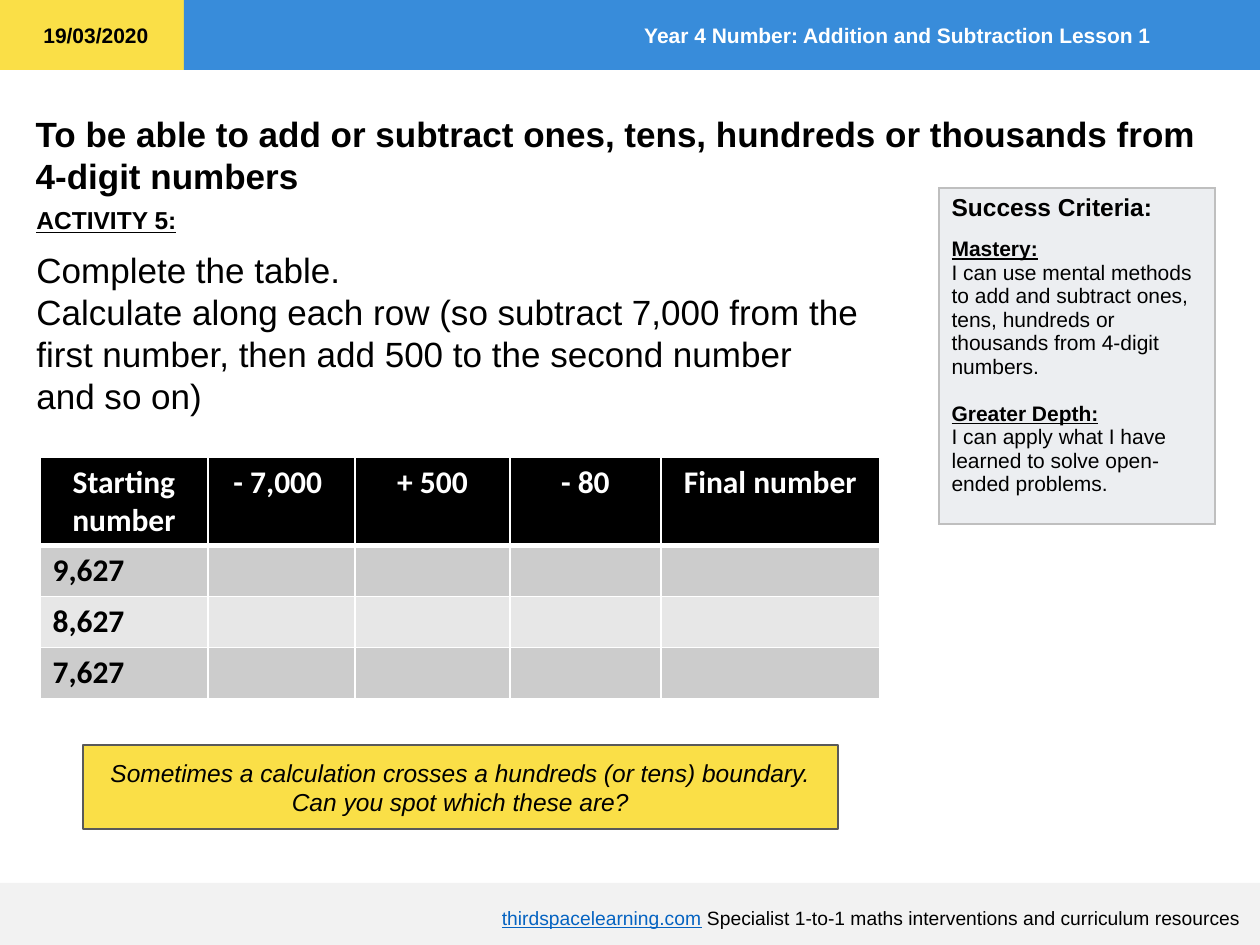
from dataclasses import dataclass
from typing import Optional

import pptx
import pptx.dml.color
import pptx.enum.shapes
import pptx.enum.text
import pptx.oxml
import pptx.oxml.ns
import pptx.util

EMU_PER_PX = 914400 / 126
ALIGN = pptx.enum.text.PP_ALIGN
ANCHOR = pptx.enum.text.MSO_ANCHOR


@dataclass(frozen=True)
class Theme:
    yellow: str = "FADF47"
    blue: str = "388CDA"
    footer: str = "F2F2F2"
    panel: str = "ECEEF1"
    panel_edge: str = "BFBFBF"
    hint_edge: str = "595959"
    link: str = "0563C1"
    black: str = "000000"
    white: str = "FFFFFF"
    bands: tuple = ("CCCCCC", "E7E7E7")
    body_font: str = "Arial"
    table_font: str = "Calibri"
    large: int = 20
    table: int = 18
    medium: int = 14
    small: int = 12
    tiny: int = 11


THEME = Theme()


@dataclass(frozen=True)
class Box:
    left: int
    top: int
    width: int
    height: int

    def emu(self) -> tuple:
        return tuple(px(v) for v in (self.left, self.top, self.width, self.height))


@dataclass(frozen=True)
class Line:
    text: str
    size: int = THEME.small
    bold: bool = False
    italic: bool = False
    underline: bool = False
    color: str = THEME.black
    font: str = THEME.body_font
    align: ALIGN = ALIGN.LEFT
    before: float = 0


def px(length: float) -> int:
    return round(length * EMU_PER_PX)


def rgb(color: str) -> pptx.dml.color.RGBColor:
    return pptx.dml.color.RGBColor.from_string(color)


def write(frame, lines: list[Line]) -> None:
    for index, line in enumerate(lines):
        paragraph = frame.paragraphs[0] if index == 0 else frame.add_paragraph()
        paragraph.alignment = line.align
        paragraph.space_before = pptx.util.Pt(line.before)
        if line.text:
            paragraph.add_run().text = line.text
        font = paragraph.font
        font.name, font.size = line.font, pptx.util.Pt(line.size)
        font.bold, font.italic, font.underline = line.bold, line.italic, line.underline
        font.color.rgb = rgb(line.color)


def add_panel(slide, box: Box, fill: str, edge: Optional[str] = None):
    panel = slide.shapes.add_shape(pptx.enum.shapes.MSO_SHAPE.RECTANGLE, *box.emu())
    panel.shadow.inherit = False
    panel.fill.solid()
    panel.fill.fore_color.rgb = rgb(fill)
    if edge:
        panel.line.color.rgb = rgb(edge)
        panel.line.width = pptx.util.Pt(1.5)
    else:
        panel.line.fill.background()
    panel.text_frame.word_wrap = True
    panel.text_frame.vertical_anchor = ANCHOR.MIDDLE
    return panel


def add_text(slide, box: Box, lines: list[Line], anchor: ANCHOR = ANCHOR.TOP):
    frame = slide.shapes.add_textbox(*box.emu()).text_frame
    frame.word_wrap = True
    frame.vertical_anchor = anchor
    write(frame, lines)
    return frame


def add_grid(slide, box: Box, columns: list[int], rows: list[int]):
    grid = slide.shapes.add_table(len(rows), len(columns), *box.emu()).table
    grid.first_row = grid.horz_banding = False
    for column, width in zip(grid.columns, columns):
        column.width = px(width)
    for row, height in zip(grid.rows, rows):
        row.height = px(height)
    return grid


def style_cell(cell, fill: str, edge: str, top: float = 1, bottom: float = 1) -> None:
    cell.fill.solid()
    cell.fill.fore_color.rgb = rgb(fill)
    properties = cell._tc.get_or_add_tcPr()
    sides = (("L", 1), ("R", 1), ("T", top), ("B", bottom))
    for index, (side, width) in enumerate(sides):
        properties.insert(index, pptx.oxml.parse_xml(
            f'<a:ln{side} {pptx.oxml.ns.nsdecls("a")} w="{pptx.util.Pt(width)}">'
            f'<a:solidFill><a:srgbClr val="{edge}"/></a:solidFill></a:ln{side}>'))


def add_header(slide) -> None:
    add_panel(slide, Box(0, 0, 184, 70), THEME.yellow)
    banner = add_panel(slide, Box(184, 0, 1076, 70), THEME.blue).text_frame
    banner.margin_right = px(109)
    write(banner, [Line("Year 4 Number: Addition and Subtraction Lesson 1", bold=True,
                        color=THEME.white, align=ALIGN.RIGHT)])
    add_text(slide, Box(31, 16, 140, 38), [Line("19/03/2020", bold=True)])


def add_footer(slide) -> None:
    add_panel(slide, Box(0, 883, 1260, 62), THEME.footer)
    frame = add_text(slide, Box(453, 900, 800, 36),
                     [Line("thirdspacelearning.com", THEME.tiny, align=ALIGN.RIGHT)],
                     ANCHOR.MIDDLE)
    credit = frame.paragraphs[0]
    site = credit.runs[0].font
    site.underline = True
    site.color.rgb = rgb(THEME.link)
    credit.add_run().text = "\u00a0Specialist 1-to-1 maths interventions and curriculum resources"


def add_title(slide) -> None:
    title = slide.shapes.title
    title.left, title.top, title.width, title.height = Box(23, 106, 1214, 97).emu()
    frame = title.text_frame
    frame.auto_size = pptx.enum.text.MSO_AUTO_SIZE.NONE
    frame.vertical_anchor = ANCHOR.TOP
    write(frame, [Line(text, THEME.large, bold=True) for text in (
        "To be able to add or subtract ones, tens, hundreds or thousands from",
        "4-digit numbers")])


def add_success_criteria(slide) -> None:
    cell = add_grid(slide, Box(939, 188, 276, 336), [276], [336]).cell(0, 0)
    style_cell(cell, THEME.panel, THEME.panel_edge)
    write(cell.text_frame, [
        Line("Success Criteria:", THEME.medium, bold=True),
        Line("Mastery:", bold=True, underline=True, before=9),
        Line("I can use mental methods to add and subtract ones, tens, hundreds or "
             "thousands from 4-digit numbers."),
        Line("Greater Depth:", bold=True, underline=True, before=13.5),
        Line("I can apply what I have learned to solve open-ended problems.")])


def add_activity(slide) -> None:
    add_text(slide, Box(24, 199, 180, 43),
             [Line("ACTIVITY 5:", THEME.medium, bold=True, underline=True)])
    add_text(slide, Box(24, 242, 880, 183), [Line(text, THEME.large) for text in (
        "Complete the table.",
        "Calculate along each row (so subtract 7,000 from the",
        "first number, then add 500 to the second number",
        "and so on)")])


def add_calculations(slide) -> None:
    headings = ["Starting number", "- 7,000 ", "+ 500", "- 80", "Final number"]
    starts = ["9,627", "8,627", "7,627"]
    columns, rows = [168, 147, 155, 151, 219], [87] + [51] * len(starts)
    grid = add_grid(slide, Box(40, 457, sum(columns), sum(rows)), columns, rows)
    for column, heading in enumerate(headings):
        cell = grid.cell(0, column)
        style_cell(cell, THEME.black, THEME.white, bottom=3)
        write(cell.text_frame, [Line(heading, THEME.table, bold=True, color=THEME.white,
                                     font=THEME.table_font, align=ALIGN.CENTER)])
    for row, start in enumerate(starts, 1):
        for column in range(len(headings)):
            cell = grid.cell(row, column)
            style_cell(cell, THEME.bands[(row - 1) % 2], THEME.white, top=3 if row == 1 else 1)
            write(cell.text_frame, [Line("" if column else start, THEME.table, bold=True,
                                         font=THEME.table_font)])


def add_hint(slide) -> None:
    hint = add_panel(slide, Box(83, 745, 755, 84), THEME.yellow, THEME.hint_edge)
    write(hint.text_frame, [Line(
        "Sometimes a calculation crosses a hundreds (or tens) boundary. "
        "Can you spot which these are?", THEME.medium, italic=True, align=ALIGN.CENTER)])


def main() -> None:
    deck = pptx.Presentation()
    deck.slide_width, deck.slide_height = px(1260), px(945)
    slide = deck.slides.add_slide(deck.slide_layouts.get_by_name("Title Only"))
    for add_part in (add_header, add_footer, add_title, add_success_criteria,
                     add_activity, add_calculations, add_hint):
        add_part(slide)
    deck.save("out.pptx")


if __name__ == "__main__":
    main()
